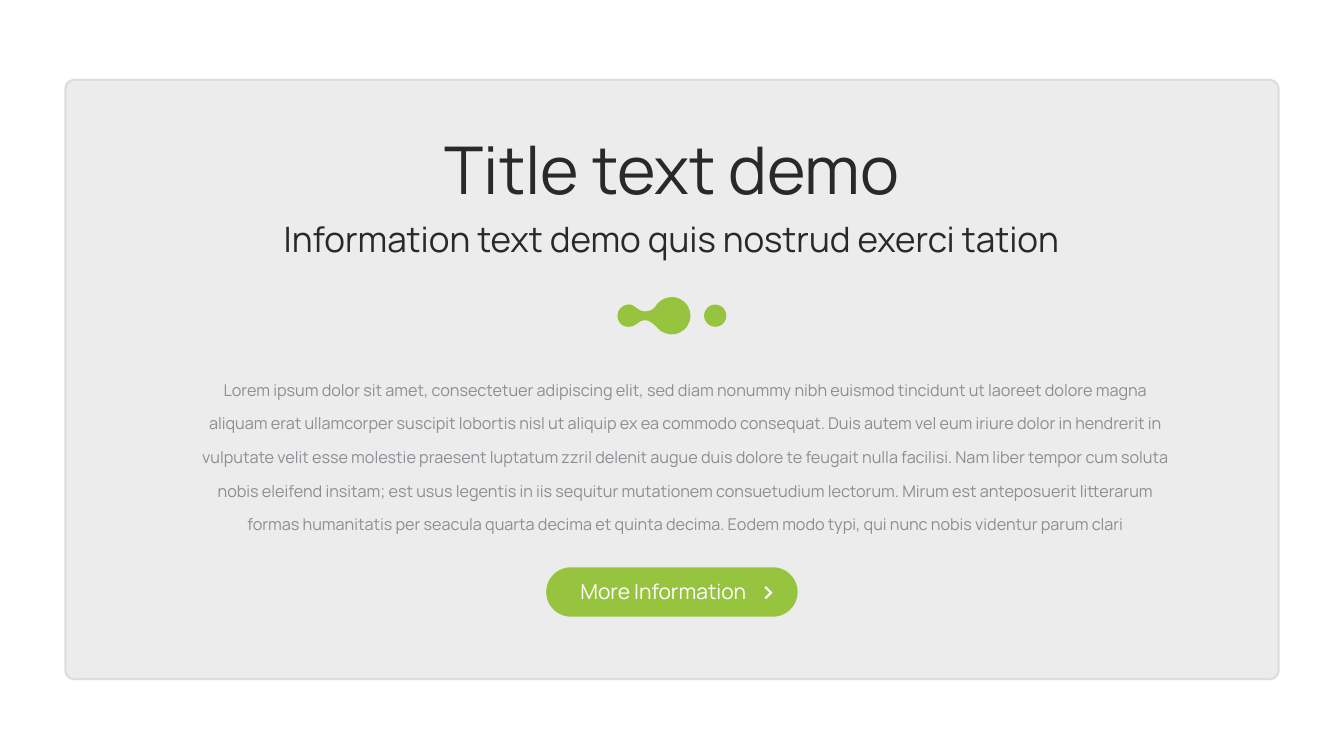
from dataclasses import dataclass

from pptx import Presentation
from pptx.dml.color import RGBColor
from pptx.enum.shapes import MSO_SHAPE
from pptx.enum.text import MSO_ANCHOR, MSO_AUTO_SIZE, PP_ALIGN
from pptx.oxml.ns import qn
from pptx.util import Cm, Pt
from lxml.etree import SubElement


@dataclass(frozen=True)
class Theme:
    font: str = "Manrope"
    panel: str = "ECECEC"
    border: str = "DDDDDD"
    accent: str = "96C43F"
    dark: str = "292929"
    muted: str = "8C8E93"
    white: str = "FFFFFF"
    title_size: int = 94
    subtitle_size: int = 50
    body_size: int = 40
    button_size: int = 30
    border_width: int = 3
    inset: float = 0.15


BODY = (
    "Lorem ipsum dolor sit amet, consectetuer adipiscing elit, sed diam nonummy nibh "
    "euismod tincidunt ut laoreet dolore magna aliquam erat ullamcorper suscipit lobortis "
    "nisl ut aliquip ex ea commodo consequat. Duis autem vel eum iriure dolor in hendrerit "
    "in vulputate velit esse molestie praesent luptatum zzril delenit augue duis dolore te "
    "feugait nulla facilisi. Nam liber tempor cum soluta nobis eleifend insitam; est usus "
    "legentis in iis sequitur mutationem consuetudium lectorum. Mirum est anteposuerit "
    "litterarum formas humanitatis per seacula quarta decima et quinta decima. Eodem modo "
    "typi, qui nunc nobis videntur parum clari"
)

BLOB_START = (31.67, 15.34)
BLOB_CURVES = [
    ((31.37, 15.37), (31.12, 15.6), (31.12, 15.9)),
    ((31.12, 16.18), (31.29, 16.41), (31.55, 16.46)),
    ((31.67, 16.48), (31.8, 16.48), (31.9, 16.43)),
    ((31.95, 16.41), (31.98, 16.38), (32, 16.38)),
    ((32.05, 16.36), (32.08, 16.33), (32.11, 16.31)),
    ((32.21, 16.21), (32.36, 16.13), (32.51, 16.13)),
    ((32.79, 16.15), (32.99, 16.38), (33.17, 16.56)),
    ((33.22, 16.59), (33.25, 16.61), (33.27, 16.66)),
    ((33.58, 16.87), (33.96, 16.92), (34.26, 16.76)),
    ((34.59, 16.61), (34.8, 16.28), (34.8, 15.9)),
    ((34.8, 15.54), (34.59, 15.21), (34.26, 15.06)),
    ((33.88, 14.88), (33.4, 14.99), (33.12, 15.32)),
    ((33.1, 15.37), (33.07, 15.42), (33.02, 15.47)),
    ((32.89, 15.62), (32.72, 15.7), (32.54, 15.7)),
    ((32.39, 15.7), (32.23, 15.65), (32.11, 15.54)),
    ((32.05, 15.49), (32, 15.47), (31.95, 15.42)),
    ((31.88, 15.37), (31.78, 15.34), BLOB_START),
]
CHEVRON = [(38.61, 29.54), (38.53, 29.62), (38.79, 29.87),
           (38.53, 30.12), (38.61, 30.2), (38.94, 29.87)]


class SlideBuilder:
    def __init__(self, slide, theme):
        self.slide = slide
        self.theme = theme

    def paint(self, shape, fill, line=None):
        shape.shadow.inherit = False
        shape.fill.solid()
        shape.fill.fore_color.rgb = RGBColor.from_string(fill)
        if line:
            shape.line.color.rgb = RGBColor.from_string(line)
            shape.line.width = Pt(self.theme.border_width)
        else:
            shape.line.fill.background()

    def preset(self, kind, box, fill, line=None, corner=None):
        shape = self.slide.shapes.add_shape(kind, *map(Cm, box))
        if corner is not None:
            shape.adjustments[0] = corner
        self.paint(shape, fill, line)

    def outline(self, points, fill):
        corners = [(Cm(x), Cm(y)) for x, y in points]
        builder = self.slide.shapes.build_freeform(*corners[0])
        builder.add_line_segments(corners[1:], close=True)
        shape = builder.convert_to_shape()
        self.paint(shape, fill)
        return shape

    def curved_outline(self, start, curves, fill):
        shape = self.outline([start] + [curve[-1] for curve in curves], fill)
        segments = list(shape._element.iter(qn("a:lnTo")))
        for segment, curve in zip(segments, curves):
            segment.tag = qn("a:cubicBezTo")
            segment.clear()
            for x, y in curve:
                SubElement(segment, qn("a:pt"),
                           x=str(Cm(x) - shape.left), y=str(Cm(y) - shape.top))

    def text(self, text, *, box, size, color, baseline=None):
        frame = self.slide.shapes.add_textbox(*map(Cm, box)).text_frame
        frame.word_wrap = True
        frame.auto_size = MSO_AUTO_SIZE.SHAPE_TO_FIT_TEXT
        frame.vertical_anchor = MSO_ANCHOR.MIDDLE
        frame.margin_left = frame.margin_right = Cm(self.theme.inset)
        frame.margin_top = frame.margin_bottom = Cm(self.theme.inset)
        paragraph = frame.paragraphs[0]
        paragraph.alignment = PP_ALIGN.CENTER
        run = paragraph.add_run()
        run.text = text
        run.font.name = self.theme.font
        run.font.size = Pt(size)
        run.font.color.rgb = RGBColor.from_string(color)
        if baseline:
            run.font._element.set("baseline", str(baseline * 1000))


def main():
    presentation = Presentation()
    presentation.slide_width = Cm(67.74)
    presentation.slide_height = Cm(38.1)
    theme = Theme()
    page = SlideBuilder(presentation.slides.add_slide(presentation.slide_layouts[6]), theme)

    page.preset(MSO_SHAPE.ROUNDED_RECTANGLE, (3.3, 4.03, 61.14, 30.2),
                theme.panel, line=theme.border, corner=0.014)
    page.text("Title text demo", box=(19.99, 6.4, 27.76, 4.17),
              size=theme.title_size, color=theme.dark)
    page.text("Information text demo quis nostrud exerci tation",
              box=(12.19, 10.85, 43.33, 2.36),
              size=theme.subtitle_size, color=theme.dark)

    page.curved_outline(BLOB_START, BLOB_CURVES, theme.accent)
    page.preset(MSO_SHAPE.OVAL, (35.49, 15.35, 1.12, 1.12), theme.accent)

    page.text(BODY, box=(9.81, 19.47, 49.48, 7.11),
              size=theme.body_size, color=theme.muted, baseline=16)

    page.preset(MSO_SHAPE.ROUNDED_RECTANGLE, (27.53, 28.59, 12.67, 2.49),
                theme.accent, corner=0.5)
    page.text("More Information", box=(28.56, 29.03, 9.75, 1.52),
              size=theme.button_size, color=theme.white)
    page.outline(CHEVRON, theme.white)

    presentation.save("out.pptx")


if __name__ == "__main__":
    main()
